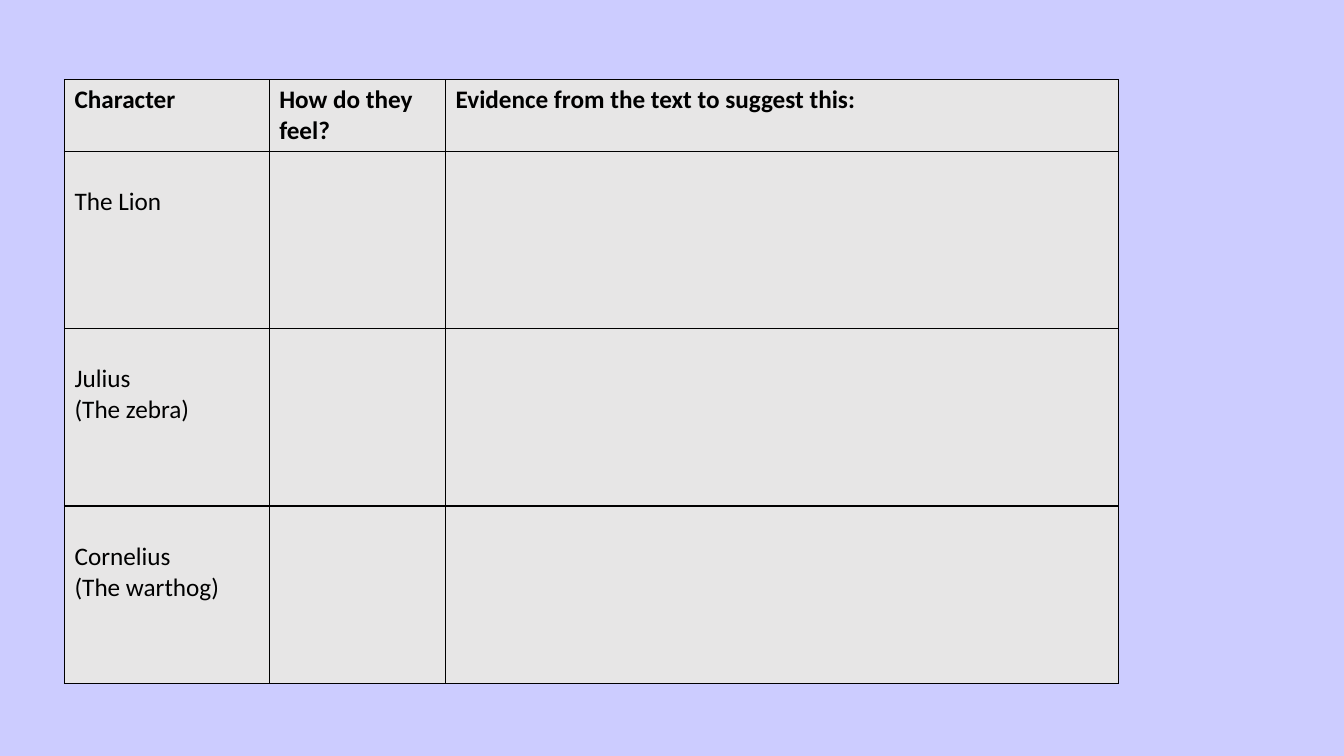
from lxml.etree import SubElement
from pptx import Presentation
from pptx.dml.color import RGBColor as RGB
from pptx.oxml.ns import qn
from pptx.util import Inches, Pt

COLORS = {"background": "CCCCFF", "cell": "E7E6E6", "ink": "000000"}
FONT, SIZE = "Calibri", 18

# Grid in inches
LEFT, TOP = 0.64, 0.79
COLS = [2.03, 1.75, 6.67]
HEADER_H, ROW_H = 0.71, 1.76
LABEL_TOP = 0.35  # drops each name one line below the row's edge

HEADERS = ["Character", "How do they feel?",
           "Evidence from the text to suggest this:"]
CHARACTERS = ["The Lion", "Julius\n(The zebra)", "Cornelius\n(The warthog)"]


def add_borders(cell, width=1):
    tcPr = cell._tc.get_or_add_tcPr()
    for side in ("lnL", "lnR", "lnT", "lnB"):
        ln = SubElement(tcPr, qn(f"a:{side}"), w=str(Pt(width)))
        fill = SubElement(ln, qn("a:solidFill"))
        SubElement(fill, qn("a:srgbClr"), val=COLORS["ink"])


def style_cell(cell):
    # Borders must precede the fill in the cell properties
    add_borders(cell)
    cell.fill.solid()
    cell.fill.fore_color.rgb = RGB.from_string(COLORS["cell"])


def write_cell(cell, text, bold=False):
    tf = cell.text_frame
    tf.text = text
    for p in tf.paragraphs:
        for r in p.runs:
            r.font.name, r.font.size, r.font.bold = FONT, Pt(SIZE), bold
            r.font.color.rgb = RGB.from_string(COLORS["ink"])


def add_grid(s, cols, rows):
    frame = s.shapes.add_table(len(rows), len(cols), Inches(LEFT), Inches(TOP),
                               Inches(sum(cols)), Inches(sum(rows)))
    table = frame.table
    table.horz_banding = False
    for col, width in zip(table.columns, cols):
        col.width = Inches(width)
    for row, height in zip(table.rows, rows):
        row.height = Inches(height)
    for cell in table.iter_cells():
        style_cell(cell)
    return table


def main():
    prs = Presentation()
    prs.slide_width, prs.slide_height = Inches(13.33), Inches(7.5)
    s = prs.slides.add_slide(prs.slide_layouts[6])

    # Background
    s.background.fill.solid()
    s.background.fill.fore_color.rgb = RGB.from_string(COLORS["background"])

    # Table with a heading row and one row per character
    table = add_grid(s, COLS, [HEADER_H] + [ROW_H] * len(CHARACTERS))
    for i, heading in enumerate(HEADERS):
        write_cell(table.cell(0, i), heading, bold=True)
    for i, name in enumerate(CHARACTERS, start=1):
        cell = table.cell(i, 0)
        cell.margin_top = Inches(LABEL_TOP)
        write_cell(cell, name)

    prs.save("out.pptx")


if __name__ == "__main__":
    main()
